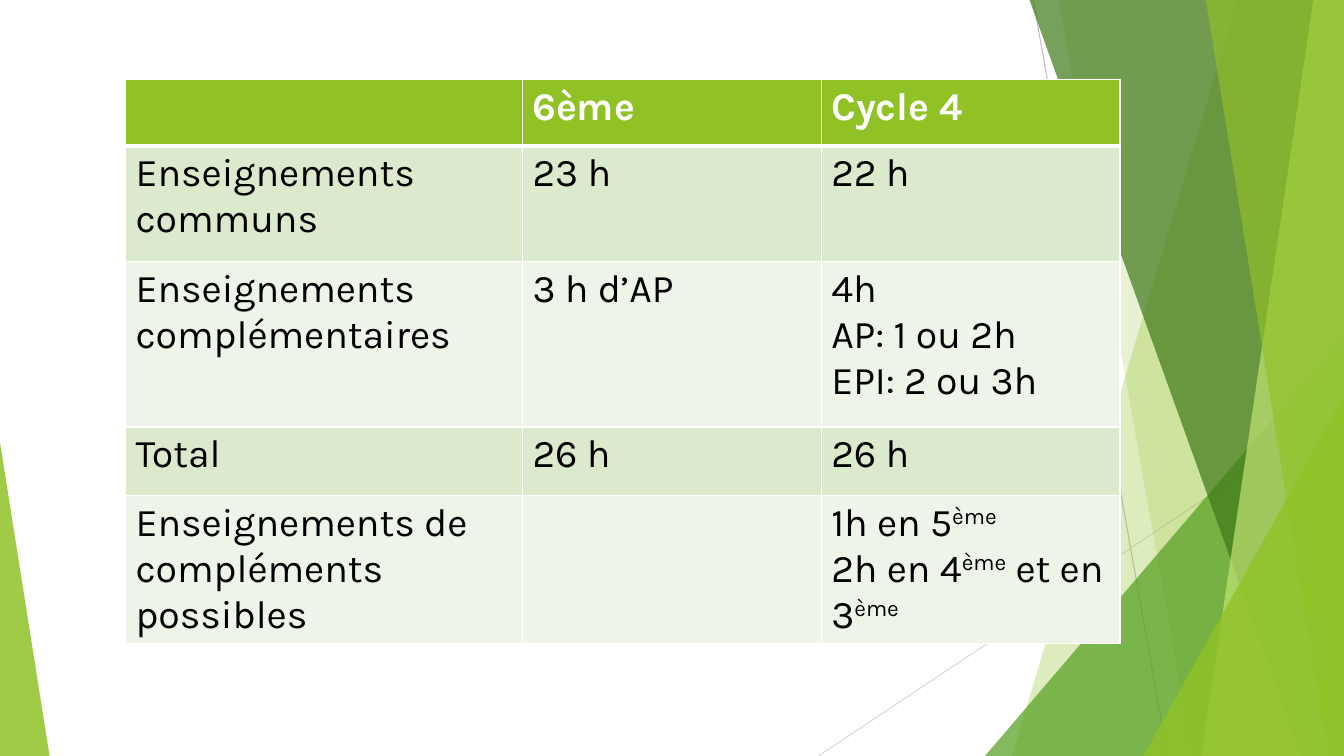
"""Build the weekly teaching hours slide."""
from lxml import etree
from pptx import Presentation
from pptx.dml.color import RGBColor
from pptx.enum import shapes
from pptx.oxml import ns
from pptx.util import Pt

WHITE = RGBColor(0xFF, 0xFF, 0xFF)
BLACK = RGBColor(0, 0, 0)
GREY = RGBColor(0xBF, 0xBF, 0xBF)
PALE_GREY = RGBColor(0xD9, 0xD9, 0xD9)
LIME = RGBColor(0x90, 0xC2, 0x26)
LIGHT_LIME = RGBColor(0xC0, 0xE4, 0x74)
GREEN = RGBColor(0x54, 0xA0, 0x21)
DARK_GREEN = RGBColor(0x3F, 0x78, 0x19)
BAND = RGBColor(0xDB, 0xE9, 0xCD)
PALE_BAND = RGBColor(0xEE, 0xF4, 0xE8)

WIDTH, HEIGHT, TOP = 960, 540, -0.6
COLUMNS = [283.6, 213.4, 213.4]
ROWS = [47.4, 82.6, 118.2, 49, 82.6]
HOURS = [
    ["", "6ème", "Cycle 4"],
    ["Enseignements communs", "23 h", "22 h"],
    ["Enseignements complémentaires", "3 h d’AP", "4h\nAP: 1 ou 2h\nEPI: 2 ou 3h"],
    ["Total", "26 h", "26 h"],
    ["Enseignements de compléments possibles", "",
     "1h en 5^ème^\n2h en 4^ème^ et en 3^ème^"],
]


class Deck:
    """Hold the text style and the current slide."""

    def __init__(self, font, size):
        self.font, self.size = font, size
        self.prs = Presentation()
        self.prs.slide_width, self.prs.slide_height = Pt(WIDTH), Pt(HEIGHT)
        self.s = self.prs.slides.add_slide(self.prs.slide_layouts[6])

    def line(self, x1, y1, x2, y2, color):
        """Draw a thin straight line."""
        c = self.s.shapes.add_connector(
            shapes.MSO_CONNECTOR.STRAIGHT, Pt(x1), Pt(y1), Pt(x2), Pt(y2))
        c.line.color.rgb, c.line.width = color, Pt(0.75)
        etree.SubElement(c._element.spPr, ns.qn("a:effectLst"))

    def paint(self, sp, color, opacity):
        """Give a shape a translucent fill without outline or shadow."""
        sp.shadow.inherit = False
        sp.fill.solid()
        sp.fill.fore_color.rgb = color
        sp.line.fill.background()
        clr = sp._element.spPr.find(".//" + ns.qn("a:srgbClr"))
        etree.SubElement(clr, ns.qn("a:alpha"), val=str(opacity * 1000))

    def shard(self, x_top, x_bottom, color, opacity):
        """Fill from a slanted edge to the right side of the slide."""
        fb = self.s.shapes.build_freeform(Pt(x_top), Pt(TOP))
        corners = [(WIDTH, TOP), (WIDTH, HEIGHT), (x_bottom, HEIGHT)]
        fb.add_line_segments([(Pt(x), Pt(y)) for x, y in corners])
        self.paint(fb.convert_to_shape(), color, opacity)

    def wedge(self, x, y, w, apex, color, opacity):
        """Draw a triangle that stands on the bottom of the slide."""
        sp = self.s.shapes.add_shape(
            shapes.MSO_SHAPE.ISOSCELES_TRIANGLE, Pt(x), Pt(y), Pt(w), Pt(HEIGHT - y))
        sp.adjustments[0] = apex
        self.paint(sp, color, opacity)

    def label(self, tf, content, color, bold):
        """Set lines of text, with superscripts between carets."""
        for i, row in enumerate(content.split("\n")):
            p = tf.add_paragraph() if i else tf.paragraphs[0]
            p.font.name, p.font.size = self.font, Pt(self.size)
            p.font.bold, p.font.color.rgb = bold, color
            for j, part in enumerate(row.split("^")):
                if part:
                    r = p.add_run()
                    r.text = part
                    if j % 2:
                        r._r.get_or_add_rPr().set("baseline", "30000")

    def border(self, cell, widths):
        """Set white borders in the order left, right, top, bottom."""
        pr = cell._tc.get_or_add_tcPr()
        for i, (side, width) in enumerate(zip("LRTB", widths)):
            ln = etree.Element(ns.qn("a:ln" + side), w=str(Pt(width)))
            fill = etree.SubElement(ln, ns.qn("a:solidFill"))
            etree.SubElement(fill, ns.qn("a:srgbClr"), val=str(WHITE))
            pr.insert(i, ln)

    def table(self, x, y, columns, rows, content):
        """Add a table with a header row and banded body rows."""
        t = self.s.shapes.add_table(
            len(rows), len(columns), Pt(x), Pt(y), Pt(sum(columns)), Pt(sum(rows))).table
        for col, w in zip(t.columns, columns):
            col.width = Pt(w)
        for i, h in enumerate(rows):
            t.rows[i].height = Pt(h)
            head = i == 0
            fill = LIME if head else BAND if i % 2 else PALE_BAND
            for j, value in enumerate(content[i]):
                cell = t.cell(i, j)
                cell.fill.solid()
                cell.fill.fore_color.rgb = fill
                self.border(cell, [1, 1, 3 if i == 1 else 1, 3 if head else 1])
                self.label(cell.text_frame, value, WHITE if head else BLACK, head)


def main():
    """Draw the backdrop and the table, then save."""
    d = Deck("Karla", 28)
    d.line(738, 0, 834, HEIGHT, GREY)
    d.line(WIDTH, 290, 584.6, HEIGHT, PALE_GREY)
    d.shard(884.2, 722.9, LIME, 30)
    d.shard(756, 851.8, LIME, 20)
    d.wedge(703.6, 239.8, 256.4, 1, GREEN, 72)
    d.shard(735.2, 929.6, DARK_GREEN, 70)
    d.shard(938.2, 858.2, LIGHT_LIME, 70)
    d.shard(861.2, 949, LIME, 65)
    d.wedge(816.6, 283, 143.4, 1, LIME, 80)
    d.wedge(0, 316, 35.4, 0, LIME, 85)
    d.table(89.6, 56.8, COLUMNS, ROWS, HOURS)
    d.prs.save("out.pptx")


if __name__ == "__main__":
    main()
